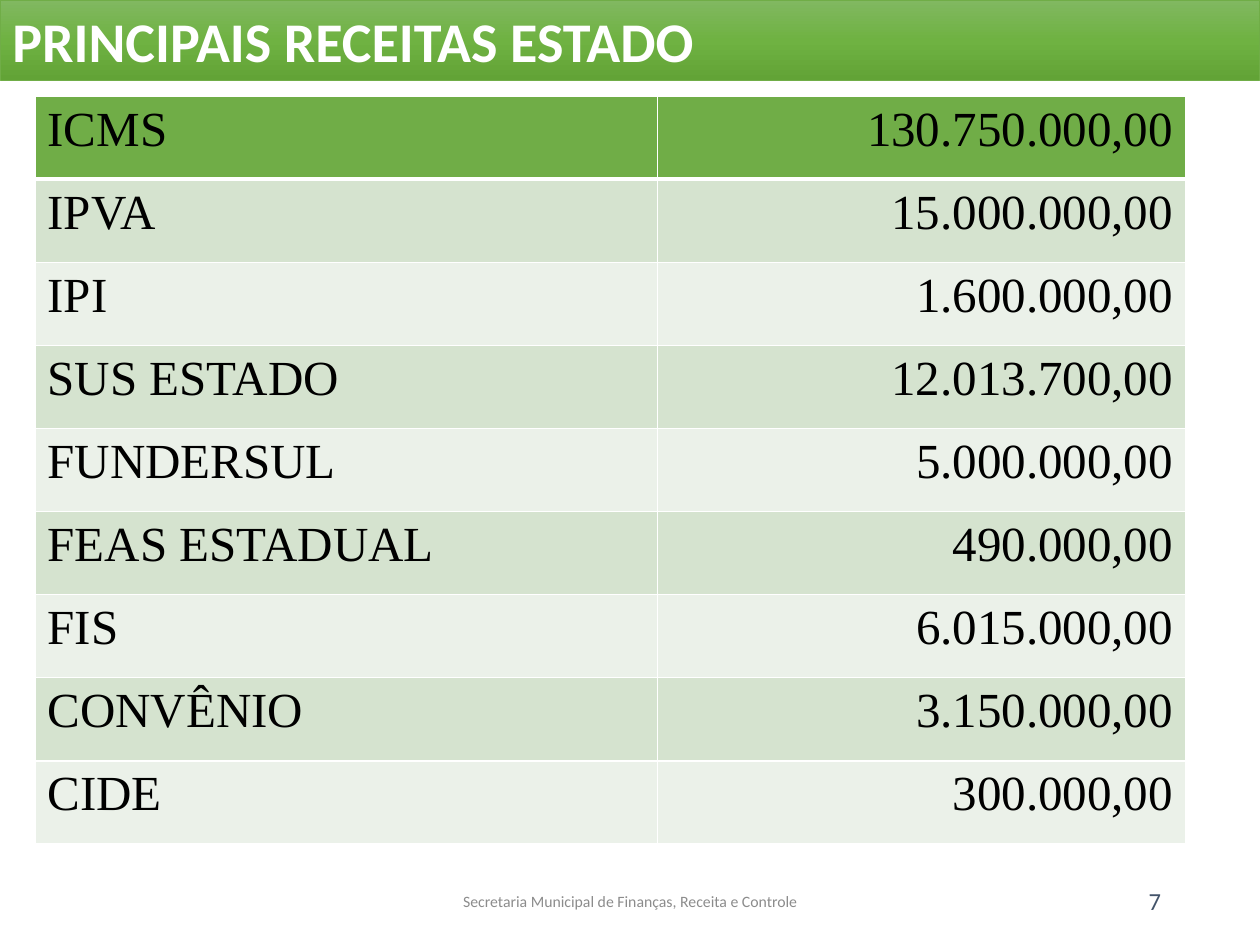
from copy import deepcopy

from lxml.etree import SubElement
from pptx import Presentation
from pptx.dml.color import RGBColor
from pptx.enum.shapes import MSO_SHAPE
from pptx.enum.text import MSO_ANCHOR, PP_ALIGN
from pptx.oxml.ns import qn
from pptx.util import Pt

TITLE = "PRINCIPAIS RECEITAS ESTADO"
REVENUES = [
    ("ICMS", "130.750.000,00"),
    ("IPVA", "15.000.000,00"),
    ("IPI", "1.600.000,00"),
    ("SUS ESTADO", "12.013.700,00"),
    ("FUNDERSUL", "5.000.000,00"),
    ("FEAS ESTADUAL", "490.000,00"),
    ("FIS", "6.015.000,00"),
    ("CONVÊNIO", "3.150.000,00"),
    ("CIDE", "300.000,00"),
]
FOOTER = "Secretaria Municipal de Finanças, Receita e Controle"
PAGE_NUMBER = "7"

PAGE_WIDTH, PAGE_HEIGHT = 720, 540
TITLE_HEIGHT = 46
TABLE_LEFT, TABLE_TOP = 20, 54.9
COLUMN_WIDTHS = (355.7, 301.7)
ROW_HEIGHT = 47.5
FOOTER_TOP, FOOTER_HEIGHT = 500.5, 28.75

GREEN, WHITE = "70AD47", "FFFFFF"
BANDS = ("D5E3CF", "EBF1E9")
TITLE_GRADIENT = [(0, "81B861"), (0.5, "6FB242"), (1, "62A336")]
TITLE_FONT = {"name": "Calibri", "size": Pt(32), "bold": True}
TABLE_FONT = {"name": "Times New Roman", "size": Pt(28), "bold": False}
FOOTER_FONT = {"name": "Calibri", "size": Pt(9)}
NUMBER_FONT = {"name": "Calibri", "size": Pt(14)}


def rgb(value):
    return RGBColor.from_string(value)


def write(frame, text, font, color, align):
    para = frame.paragraphs[0]
    para.alignment = align
    span = para.add_run()
    span.text = text
    for name, value in font.items():
        setattr(span.font, name, value)
    span.font.color.rgb = rgb(color)


def set_gradient(shape, stops):
    """Fill the shape with a top-to-bottom gradient of any number of stops."""
    shape.fill.gradient()
    shape.fill.gradient_angle = 270
    stop_list = shape._element.spPr.find(qn("a:gradFill")).find(qn("a:gsLst"))
    for _ in range(len(stops) - len(stop_list)):
        stop_list.append(deepcopy(stop_list[0]))
    for stop, (position, color) in zip(shape.fill.gradient_stops, stops):
        stop.position = position
        stop.color.rgb = rgb(color)


def set_borders(cell, widths):
    """Draw white borders; widths maps the sides L, R, T, B to points."""
    for side, width in widths.items():
        line = SubElement(cell._tc.get_or_add_tcPr(), qn(f"a:ln{side}"), w=str(Pt(width)))
        SubElement(SubElement(line, qn("a:solidFill")), qn("a:srgbClr"), val=WHITE)


def add_title(page):
    bar = page.shapes.add_shape(MSO_SHAPE.RECTANGLE, 0, 0, Pt(PAGE_WIDTH), Pt(TITLE_HEIGHT))
    bar.shadow.inherit = False
    set_gradient(bar, TITLE_GRADIENT)
    bar.line.color.rgb = rgb(GREEN)
    bar.line.width = Pt(0.5)
    bar.text_frame.vertical_anchor = MSO_ANCHOR.TOP
    write(bar.text_frame, TITLE, TITLE_FONT, WHITE, PP_ALIGN.LEFT)


def add_footer_text(page, left, width, text, font, color, align):
    box = page.shapes.add_textbox(Pt(left), Pt(FOOTER_TOP), Pt(width), Pt(FOOTER_HEIGHT))
    box.text_frame.word_wrap = True
    box.text_frame.vertical_anchor = MSO_ANCHOR.MIDDLE
    write(box.text_frame, text, font, color, align)


def add_revenue_table(page):
    count = len(REVENUES)
    table = page.shapes.add_table(
        count, len(COLUMN_WIDTHS), Pt(TABLE_LEFT), Pt(TABLE_TOP),
        Pt(sum(COLUMN_WIDTHS)), Pt(count * ROW_HEIGHT),
    ).table
    for column, width in zip(table.columns, COLUMN_WIDTHS):
        column.width = Pt(width)
    for index, revenue in enumerate(REVENUES):
        table.rows[index].height = Pt(ROW_HEIGHT)
        fill = BANDS[(index - 1) % 2] if index else GREEN
        borders = {"L": 1, "R": 1, "T": 3 if index == 1 else 1, "B": 1 if index else 3}
        for cell, text, align in zip(
            table.rows[index].cells, revenue, (PP_ALIGN.LEFT, PP_ALIGN.RIGHT)
        ):
            set_borders(cell, borders)
            cell.fill.solid()
            cell.fill.fore_color.rgb = rgb(fill)
            write(cell.text_frame, text, TABLE_FONT, "000000", align)


def main():
    deck = Presentation()
    deck.slide_width, deck.slide_height = Pt(PAGE_WIDTH), Pt(PAGE_HEIGHT)
    page = deck.slides.add_slide(deck.slide_layouts[6])
    add_footer_text(page, 508.5, 162, PAGE_NUMBER, NUMBER_FONT, "44546A", PP_ALIGN.RIGHT)
    add_title(page)
    add_footer_text(page, 238.5, 243, FOOTER, FOOTER_FONT, "8C8C8C", PP_ALIGN.CENTER)
    add_revenue_table(page)
    deck.save("out.pptx")


if __name__ == "__main__":
    main()
